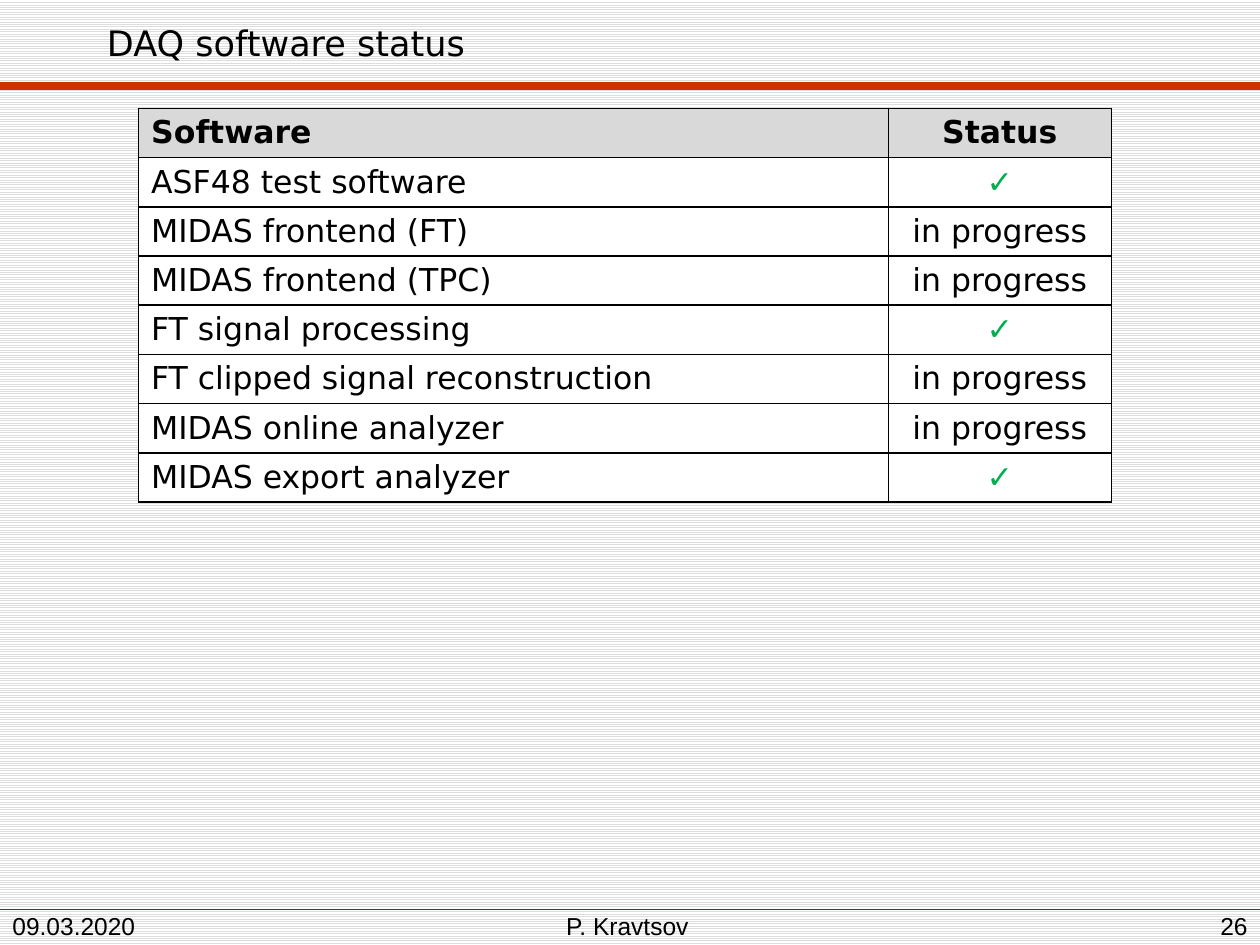
"""Build the DAQ software status slide."""
import dataclasses

import lxml.etree
import pptx
import pptx.dml.color
import pptx.enum.dml
import pptx.enum.shapes
import pptx.enum.text
import pptx.oxml.ns
import pptx.slide
import pptx.table
import pptx.text.text
import pptx.util

Inches = pptx.util.Inches
Pt = pptx.util.Pt
RGB = pptx.dml.color.RGBColor
Align = pptx.enum.text.PP_ALIGN
Anchor = pptx.enum.text.MSO_ANCHOR
qn = pptx.oxml.ns.qn


@dataclasses.dataclass(frozen=True)
class Theme:
    """Colours, fonts and type sizes of the slide."""
    ink: RGB = RGB(0x00, 0x00, 0x00)
    paper: RGB = RGB(0xFF, 0xFF, 0xFF)
    stripe: RGB = RGB(0xDD, 0xDD, 0xDD)
    header: RGB = RGB(0xD9, 0xD9, 0xD9)
    done: RGB = RGB(0x00, 0xB0, 0x50)
    title_rule: RGB = RGB(0xCC, 0x33, 0x00)
    footer_rule: RGB = RGB(0xCC, 0x00, 0x00)
    body_font: str = "DejaVu Sans"
    footer_font: str = "Arial"
    title_size: float = 20
    table_size: float = 18
    footer_size: float = 14


THEME = Theme()
DONE = "✓"
IN_PROGRESS = "in progress"


@dataclasses.dataclass(frozen=True)
class Rule:
    """A horizontal line across the slide."""
    y: float
    color: RGB
    weight: float


@dataclasses.dataclass(frozen=True)
class Label:
    """A line of text in its own box."""
    text: str
    left: float
    top: float
    width: float
    height: float
    font: str = THEME.footer_font
    size: float = THEME.footer_size
    align: Align = Align.LEFT
    anchor: Anchor = Anchor.BOTTOM
    bottom_inset: float = 0.04


@dataclasses.dataclass(frozen=True)
class Task:
    """A piece of software and its status."""
    software: str
    status: str


RULES = [
    Rule(7.22, THEME.footer_rule, 0.25),
    Rule(0.68, THEME.title_rule, 4.5),
]
LABELS = [
    Label("DAQ software status", 0.75, 0.04, 8.99, 0.6, THEME.body_font,
          THEME.title_size, anchor=Anchor.MIDDLE, bottom_inset=0.05),
    Label("P. Kravtsov", 3.11, 7.25, 3.74, 0.25, align=Align.CENTER),
    Label("09.03.2020", 0, 7.22, 1.81, 0.28),
    Label("26", 7.67, 7.18, 2.33, 0.32, align=Align.RIGHT),
]
TASKS = [
    Task("ASF48 test software", DONE),
    Task("MIDAS frontend (FT)", IN_PROGRESS),
    Task("MIDAS frontend (TPC)", IN_PROGRESS),
    Task("FT signal processing", DONE),
    Task("FT clipped signal reconstruction", IN_PROGRESS),
    Task("MIDAS online analyzer", IN_PROGRESS),
    Task("MIDAS export analyzer", DONE),
]
COLUMN_WIDTHS = (5.95, 1.77)
ROW_HEIGHT = 0.39


def format_text(paragraph: pptx.text.text._Paragraph, font: str, size: float,
                align: Align, color: RGB = THEME.ink, bold: bool = False) -> None:
    """Align a paragraph and format its runs."""
    paragraph.alignment = align
    for run in paragraph.runs:
        run.font.name = font
        run.font.size = Pt(size)
        run.font.bold = bold
        run.font.color.rgb = color


def draw_rule(slide: pptx.slide.Slide, rule: Rule) -> None:
    """Draw a full-width line without a shadow."""
    line = slide.shapes.add_connector(
        pptx.enum.shapes.MSO_CONNECTOR.STRAIGHT,
        Inches(0), Inches(rule.y), Inches(10), Inches(rule.y))
    line.line.color.rgb = rule.color
    line.line.width = Pt(rule.weight)
    lxml.etree.SubElement(line._element.spPr, qn("a:effectLst"))


def draw_label(slide: pptx.slide.Slide, label: Label) -> None:
    """Draw a text box."""
    frame = slide.shapes.add_textbox(
        Inches(label.left), Inches(label.top),
        Inches(label.width), Inches(label.height)).text_frame
    frame.word_wrap = True
    frame.vertical_anchor = label.anchor
    frame.margin_bottom = Inches(label.bottom_inset)
    frame.text = label.text
    format_text(frame.paragraphs[0], label.font, label.size, label.align)


def add_borders(cell: pptx.table._Cell) -> None:
    """Give a cell thin borders on every side."""
    properties = cell._tc.get_or_add_tcPr()
    for side in ("lnL", "lnR", "lnT", "lnB"):
        border = lxml.etree.SubElement(properties, qn(f"a:{side}"), w=str(Pt(1)))
        fill = lxml.etree.SubElement(border, qn("a:solidFill"))
        lxml.etree.SubElement(fill, qn("a:srgbClr"), val=str(THEME.ink))


def draw_cell(cell: pptx.table._Cell, text: str, is_header: bool,
              is_status: bool) -> None:
    """Fill in one table cell."""
    add_borders(cell)
    cell.fill.solid()
    cell.fill.fore_color.rgb = THEME.header if is_header else THEME.paper
    if is_status and not is_header:
        cell.vertical_anchor = Anchor.MIDDLE
    cell.text_frame.text = text
    format_text(cell.text_frame.paragraphs[0], THEME.body_font, THEME.table_size,
                Align.CENTER if is_status else Align.LEFT,
                THEME.done if text == DONE else THEME.ink,
                is_header or text == DONE)


def draw_status_table(slide: pptx.slide.Slide, tasks: list[Task]) -> None:
    """Draw the table of tasks under its header row."""
    rows = [Task("Software", "Status"), *tasks]
    table = slide.shapes.add_table(
        len(rows), len(COLUMN_WIDTHS), Inches(1.1), Inches(0.86),
        Inches(sum(COLUMN_WIDTHS)), Inches(ROW_HEIGHT * len(rows))).table
    table.horz_banding = False
    for column, width in zip(table.columns, COLUMN_WIDTHS):
        column.width = Inches(width)
    for index, task in enumerate(rows):
        table.rows[index].height = Inches(ROW_HEIGHT)
        draw_cell(table.cell(index, 0), task.software, index == 0, False)
        draw_cell(table.cell(index, 1), task.status, index == 0, True)


def main() -> None:
    """Build and save the slide."""
    deck = pptx.Presentation()
    deck.slide_width, deck.slide_height = Inches(10), Inches(7.5)
    slide = deck.slides.add_slide(deck.slide_layouts[6])
    background = slide.background.fill
    background.patterned()
    background.pattern = pptx.enum.dml.MSO_PATTERN.LIGHT_HORIZONTAL
    background.fore_color.rgb = THEME.stripe
    background.back_color.rgb = THEME.paper
    for rule in RULES:
        draw_rule(slide, rule)
    draw_status_table(slide, TASKS)
    for label in LABELS:
        draw_label(slide, label)
    deck.save("out.pptx")


if __name__ == "__main__":
    main()
